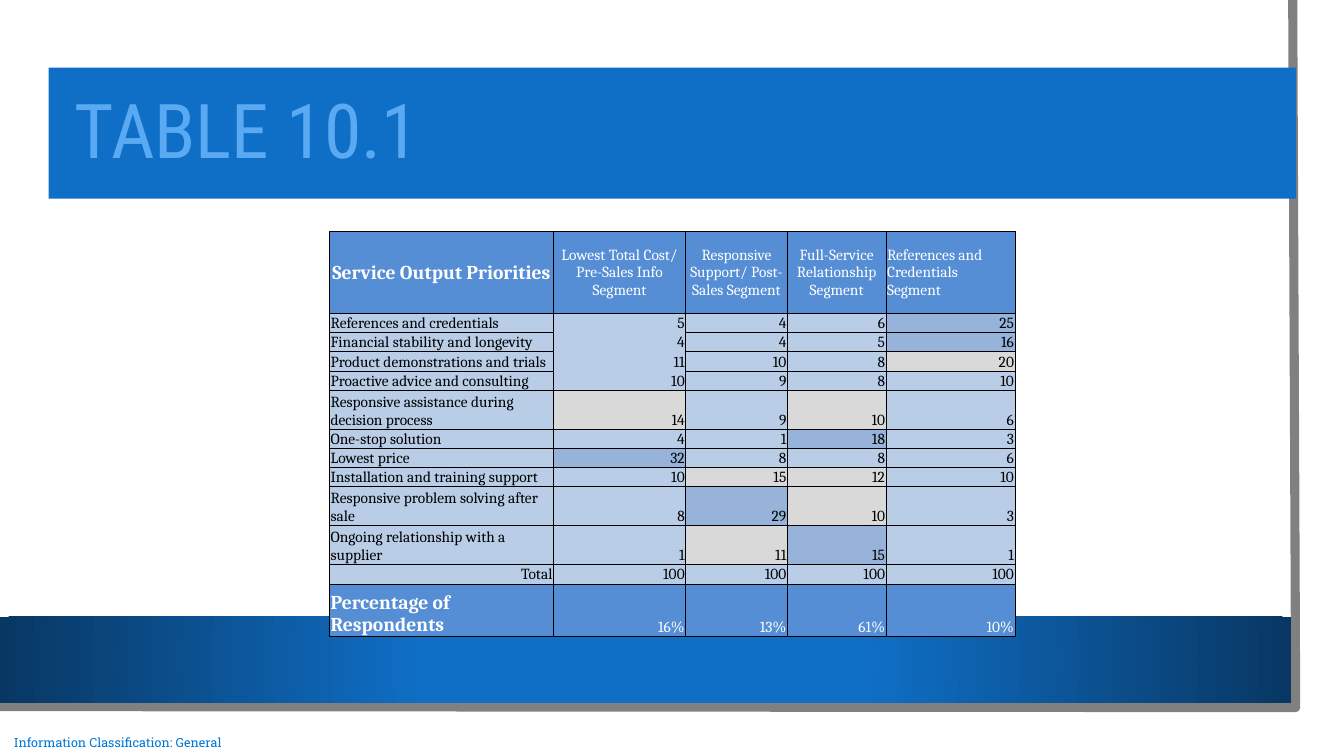
from lxml.etree import SubElement
from pptx import Presentation
from pptx.dml.color import RGBColor
from pptx.enum.shapes import MSO_SHAPE
from pptx.enum.text import MSO_ANCHOR, MSO_AUTO_SIZE, PP_ALIGN
from pptx.oxml.ns import qn
from pptx.util import Inches, Pt

COLORS = {
    "band": "0F6FC6", "band_edge": "083763", "title": "59AAF2", "frame": "808080",
    "footer": "0078D7", "header": "558ED5", "plain": "B9CDE7", "top": "97B3D9",
    "second": "D9D9D9", "white": "FFFFFF", "black": "000000",
}
COLUMNS, ROWS = 160, 90
SEGMENTS = ["Lowest Total Cost/ Pre-Sales Info Segment",
            "Responsive Support/ Post-Sales Segment",
            "Full-Service Relationship Segment",
            "References and Credentials Segment"]
# Each priority has its scores and a mark per score: T top, S second, - plain
PRIORITIES = [
    ("References and credentials", (5, 4, 6, 25), "---T"),
    ("Financial stability and longevity", (4, 4, 5, 16), "---T"),
    ("Product demonstrations and trials", (11, 10, 8, 20), "---S"),
    ("Proactive advice and consulting", (10, 9, 8, 10), "----"),
    ("Responsive assistance during decision process", (14, 9, 10, 6), "S-S-"),
    ("One-stop solution", (4, 1, 18, 3), "--T-"),
    ("Lowest price", (32, 8, 8, 6), "T---"),
    ("Installation and training support", (10, 15, 12, 10), "-SS-"),
    ("Responsive problem solving after sale", (8, 29, 10, 3), "-TS-"),
    ("Ongoing relationship with a supplier", (1, 11, 15, 1), "-ST-"),
    ("Total", (100, 100, 100, 100), "----"),
]
RESPONDENTS = ["16%", "13%", "61%", "10%"]
MARK_FILLS = {"T": "top", "S": "second", "-": "plain"}
COLUMN_WIDTHS = [26.65, 15.75, 12.1, 11.75, 15.35]
HEADER_HEIGHT, LINE_HEIGHT, TALL_HEIGHT, LAST_HEIGHT = 9.75, 2.29, 4.64, 6.3
WRAPPED_FROM = 35  # labels this long take two lines
OPEN_COLUMN, OPEN_ROWS = 1, range(1, 5)  # cells without rules between them


def rgb(name):
    return RGBColor.from_string(COLORS[name])


def write(frame, text, font="Cambria", size=11, color="black", bold=False,
          align=PP_ALIGN.LEFT, anchor=MSO_ANCHOR.MIDDLE, spacing=None):
    frame.word_wrap = True
    frame.vertical_anchor = anchor
    paragraph = frame.paragraphs[0]
    paragraph.alignment = align
    paragraph.line_spacing = spacing
    run = paragraph.add_run()
    run.text = text
    run.font.name, run.font.size, run.font.bold = font, Pt(size), bold
    run.font.color.rgb = rgb(color)


def rule_cell(cell, open_sides):
    """Draw a thin black rule on every side that is not open."""
    properties = cell._tc.get_or_add_tcPr()
    for side in "LRTB":
        rule = SubElement(properties, qn(f"a:ln{side}"), w=str(Pt(0.5)))
        if side in open_sides:
            SubElement(rule, qn("a:noFill"))
        else:
            fill = SubElement(rule, qn("a:solidFill"))
            SubElement(fill, qn("a:srgbClr"), val=COLORS["black"])


class SlideBuilder:
    def __init__(self):
        self.deck = Presentation()
        self.deck.slide_width, self.deck.slide_height = Inches(13.33), Inches(7.5)
        self.slide = self.deck.slides.add_slide(self.deck.slide_layouts[5])
        self.shapes = self.slide.shapes

    def x(self, columns):
        return round(self.deck.slide_width * columns / COLUMNS)

    def y(self, rows):
        return round(self.deck.slide_height * rows / ROWS)

    def box(self, left, top, width, height):
        return self.x(left), self.y(top), self.x(width), self.y(height)

    def band(self, *place):
        band = self.shapes.add_shape(MSO_SHAPE.RECTANGLE, *self.box(*place))
        band.shadow.inherit = False
        band.line.fill.background()
        band.fill.solid()
        band.fill.fore_color.rgb = rgb("band")
        return band

    def glowing_band(self, *place):
        """Band with a round gradient that darkens away from its centre."""
        band = self.band(*place)
        band.fill.gradient()
        for stop, position, color in zip(band.fill.gradient_stops, (0.34, 1),
                                         ("band", "band_edge")):
            stop.position = position
            stop.color.rgb = rgb(color)
        gradient = band.element.spPr.find(qn("a:gradFill"))
        gradient.remove(gradient.find(qn("a:lin")))
        circle = SubElement(gradient, qn("a:path"), path="circle")
        SubElement(circle, qn("a:fillToRect"), l="50000", t="50000", r="50000", b="50000")

    def outline(self, points, color, width):
        start, *others = [(self.x(x), self.y(y)) for x, y in points]
        builder = self.shapes.build_freeform(*start)
        builder.add_line_segments(others, close=False)
        outline = builder.convert_to_shape()
        outline.shadow.inherit = False
        outline.fill.background()
        outline.line.color.rgb = rgb(color)
        outline.line.width = Pt(width)

    def title(self, text, place, **style):
        title = self.shapes.title
        title.left, title.top, title.width, title.height = self.box(*place)
        title.element.getparent().append(title.element)  # in front of its band
        title.text_frame.auto_size = MSO_AUTO_SIZE.NONE
        write(title.text_frame, text, **style)

    def label(self, text, place, **style):
        frame = self.shapes.add_textbox(*self.box(*place)).text_frame
        frame.margin_left = frame.margin_right = 0
        frame.margin_top = frame.margin_bottom = 0
        write(frame, text, **style)

    def table(self, left, top, widths, heights):
        place = self.box(left, top, sum(widths), sum(heights))
        table = self.shapes.add_table(len(heights), len(widths), *place).table
        table.first_row = table.horz_banding = False
        for column, width in zip(table.columns, widths):
            column.width = self.x(width)
        for row, height in zip(table.rows, heights):
            row.height = self.y(height)
        return table

    def cell(self, table, row, column, text, fill, **style):
        cell = table.cell(row, column)
        cell.margin_left = cell.margin_right = cell.margin_top = Inches(0.01)
        cell.margin_bottom = 0
        open_sides = ""
        if column == OPEN_COLUMN and row in OPEN_ROWS:
            open_sides += "T" if row > OPEN_ROWS[0] else ""
            open_sides += "B" if row < OPEN_ROWS[-1] else ""
        anchor = style.pop("anchor", MSO_ANCHOR.BOTTOM)
        write(cell.text_frame, text, **style)
        cell.vertical_anchor = anchor
        rule_cell(cell, open_sides)
        cell.fill.solid()
        cell.fill.fore_color.rgb = rgb(fill)


def add_priorities(builder):
    heights = [TALL_HEIGHT if len(name) >= WRAPPED_FROM else LINE_HEIGHT
               for name, _, _ in PRIORITIES]
    table = builder.table(39.24, 27.55, COLUMN_WIDTHS,
                          [HEADER_HEIGHT, *heights, LAST_HEIGHT])

    heading = dict(color="white", anchor=MSO_ANCHOR.MIDDLE)
    builder.cell(table, 0, 0, "Service Output Priorities", "header", size=14, bold=True,
                 align=PP_ALIGN.CENTER, **heading)
    for column, segment in enumerate(SEGMENTS, 1):
        align = PP_ALIGN.LEFT if column == len(SEGMENTS) else PP_ALIGN.CENTER
        builder.cell(table, 0, column, segment, "header", align=align, **heading)

    for row, (name, scores, marks) in enumerate(PRIORITIES, 1):
        align = PP_ALIGN.RIGHT if name == "Total" else PP_ALIGN.LEFT
        builder.cell(table, row, 0, name, "plain", align=align)
        for column, (score, mark) in enumerate(zip(scores, marks), 1):
            builder.cell(table, row, column, str(score), MARK_FILLS[mark],
                         align=PP_ALIGN.RIGHT)

    last = len(PRIORITIES) + 1
    builder.cell(table, last, 0, "Percentage of Respondents", "header", size=14,
                 bold=True, color="white")
    for column, share in enumerate(RESPONDENTS, 1):
        builder.cell(table, last, column, share, "header", color="white",
                     align=PP_ALIGN.RIGHT)


def main():
    builder = SlideBuilder()
    builder.outline([(153.9, 0), (154.25, 84.24), (0, 84.12)], "frame", 6.5)
    builder.glowing_band(0, 73.44, 153.7, 10.2)
    builder.label("Information Classification: General", (0, 86.88, 28, 3.12),
                  font="Roboto Slab", size=9, color="footer", align=PP_ALIGN.CENTER)
    builder.band(5.8, 8.04, 148.5, 15.6)
    builder.title("TABLE 10.1", (7.7, 9.24, 144.75, 13.32), font="Roboto Condensed",
                  size=54, color="title", spacing=0.9)
    add_priorities(builder)
    builder.deck.save("out.pptx")


if __name__ == "__main__":
    main()
